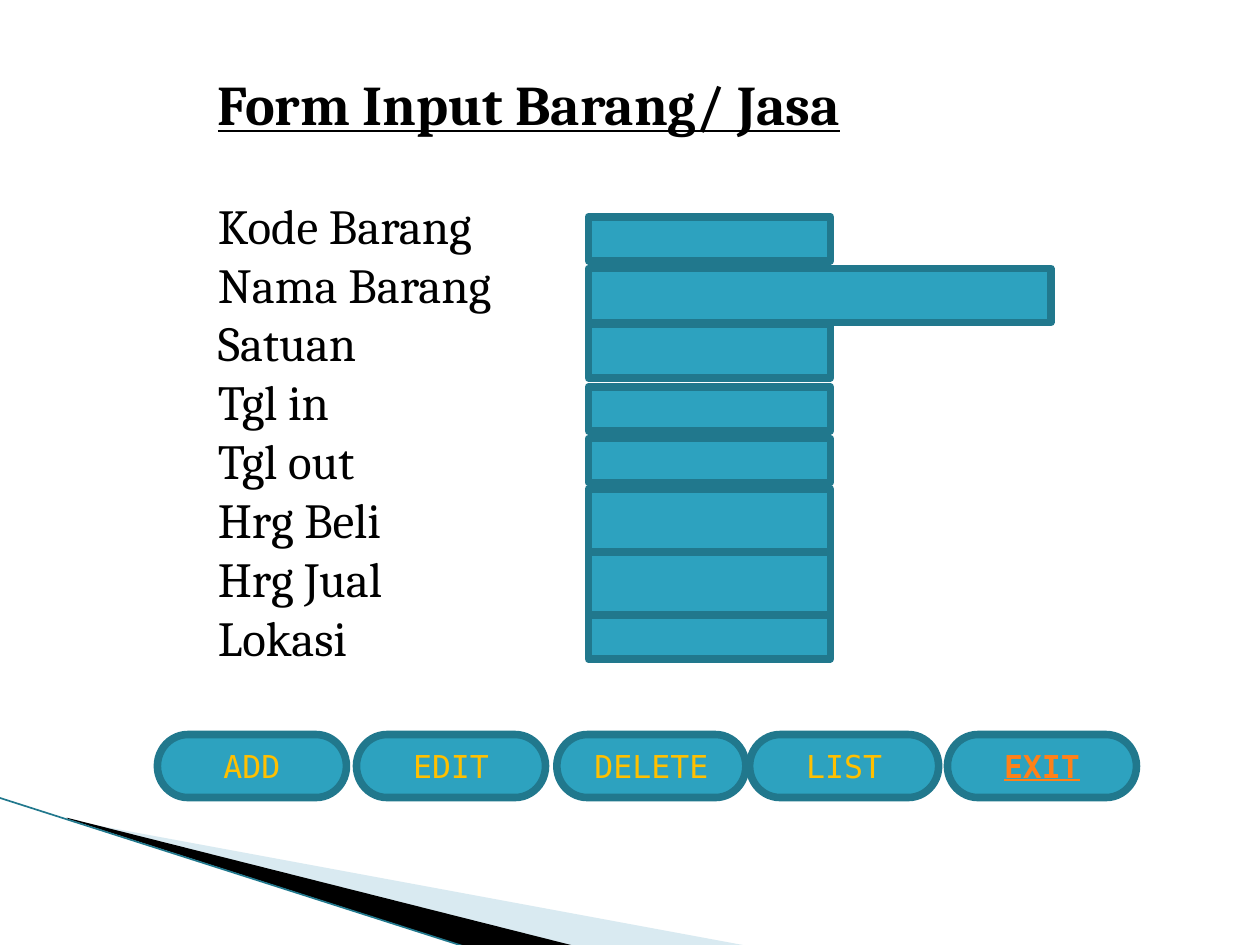
from lxml import etree
from pptx import Presentation
from pptx.dml.color import RGBColor
from pptx.enum.shapes import MSO_CONNECTOR, MSO_SHAPE
from pptx.enum.text import MSO_ANCHOR, MSO_AUTO_SIZE, PP_ALIGN
from pptx.oxml.ns import qn
from pptx.util import Inches, Pt

RECT, PILL = MSO_SHAPE.RECTANGLE, MSO_SHAPE.FLOWCHART_TERMINATOR
TOP, MIDDLE = MSO_ANCHOR.TOP, MSO_ANCHOR.MIDDLE
LEFT, CENTER = PP_ALIGN.LEFT, PP_ALIGN.CENTER
NO_FIT = MSO_AUTO_SIZE.NONE
STRAIGHT = MSO_CONNECTOR.STRAIGHT


def write(tf, lines, font="Cambria", size=28, color="000000", strong=False,
          align=LEFT, anchor=TOP):
    tf.word_wrap = True
    tf.auto_size = NO_FIT
    tf.vertical_anchor = anchor
    for i, line in enumerate(lines):
        p = tf.paragraphs[0] if i == 0 else tf.add_paragraph()
        p.alignment = align
        p.space_before = Pt(0)
        pPr = p._p.get_or_add_pPr()
        pPr.set("marL", "0")
        pPr.set("indent", "0")
        etree.SubElement(pPr, qn("a:buNone"))
        r = p.add_run()
        r.text = line
        r.font.name = font
        r.font.size = Pt(size)
        r.font.bold = strong
        r.font.underline = strong
        r.font.color.rgb = RGBColor.from_string(color)


def paint(sp, fill, line=None):
    sp.shadow.inherit = False
    sp.fill.solid()
    sp.fill.fore_color.rgb = RGBColor.from_string(fill)
    if line:
        sp.line.color.rgb = RGBColor.from_string(line)
        sp.line.width = Pt(4.33)
    else:
        sp.line.fill.background()


prs = Presentation()
prs.slide_width, prs.slide_height = Inches(10), Inches(7.5)
s = prs.slides.add_slide(prs.slide_layouts[1])

wedges = [
    ("A0CBDC", 40, [(0.55, 6.51), (5.95, 7.51), (4.56, 7.51), (0.55, 6.5)]),
    ("000000", 100, [(0.53, 6.49), (4.57, 7.51), (3.72, 7.52), (0.54, 6.5)]),
]
for color, opacity, points in wedges:
    points = [(Inches(x), Inches(y)) for x, y in points]
    fb = s.shapes.build_freeform(*points[0], scale=1.0)
    fb.add_line_segments(points[1:], close=True)
    sp = fb.convert_to_shape()
    paint(sp, color)
    if opacity < 100:
        clr = sp._element.spPr.find(qn("a:solidFill"))[0]
        etree.SubElement(clr, qn("a:alpha")).set("val", str(opacity * 1000))

edge = s.shapes.add_connector(STRAIGHT, Inches(-0.01), Inches(6.33), Inches(3.71), Inches(7.52))
edge.line.color.rgb = RGBColor.from_string("21788D")
edge.line.width = Pt(0.95)
etree.SubElement(edge._element.spPr, qn("a:effectLst"))

fields = [
    ("Kode Barang", 1.72, 1.92, 0.35),
    ("Nama Barang", 2.13, 3.67, 0.43),
    ("Satuan", 2.57, 1.92, 0.43),
    ("Tgl in", 3.07, 1.92, 0.35),
    ("Tgl out", 3.48, 1.92, 0.35),
    ("Hrg Beli", 3.88, 1.92, 0.5),
    ("Hrg Jual", 4.38, 1.92, 0.5),
    ("Lokasi", 4.88, 1.92, 0.35),
]

title, body = s.shapes.title, s.placeholders[1]
for sp, top, height in [(title, 0.5, 0.7), (body, 1.5, 3.88)]:
    sp.left, sp.top = Inches(1.63), Inches(top)
    sp.width, sp.height = Inches(5.92), Inches(height)
write(title.text_frame, ["Form Input Barang/ Jasa"], size=32, strong=True)
write(body.text_frame, [field[0] for field in fields])

for label, top, width, height in fields:
    sp = s.shapes.add_shape(RECT, Inches(4.67), Inches(top), Inches(width), Inches(height))
    paint(sp, "2DA2BF", "21788D")

buttons = [("ADD", 1.25), ("EDIT", 2.83), ("DELETE", 4.42), ("LIST", 5.95), ("EXIT", 7.52)]
for label, left in buttons:
    sp = s.shapes.add_shape(PILL, Inches(left), Inches(5.83), Inches(1.5), Inches(0.5))
    paint(sp, "2DA2BF", "21788D")
    leaving = label == "EXIT"
    write(sp.text_frame, [label], font="DejaVu Sans Mono", size=18,
          color="FF8119" if leaving else "FFC000", strong=leaving,
          align=CENTER, anchor=MIDDLE)

prs.save("out.pptx")
